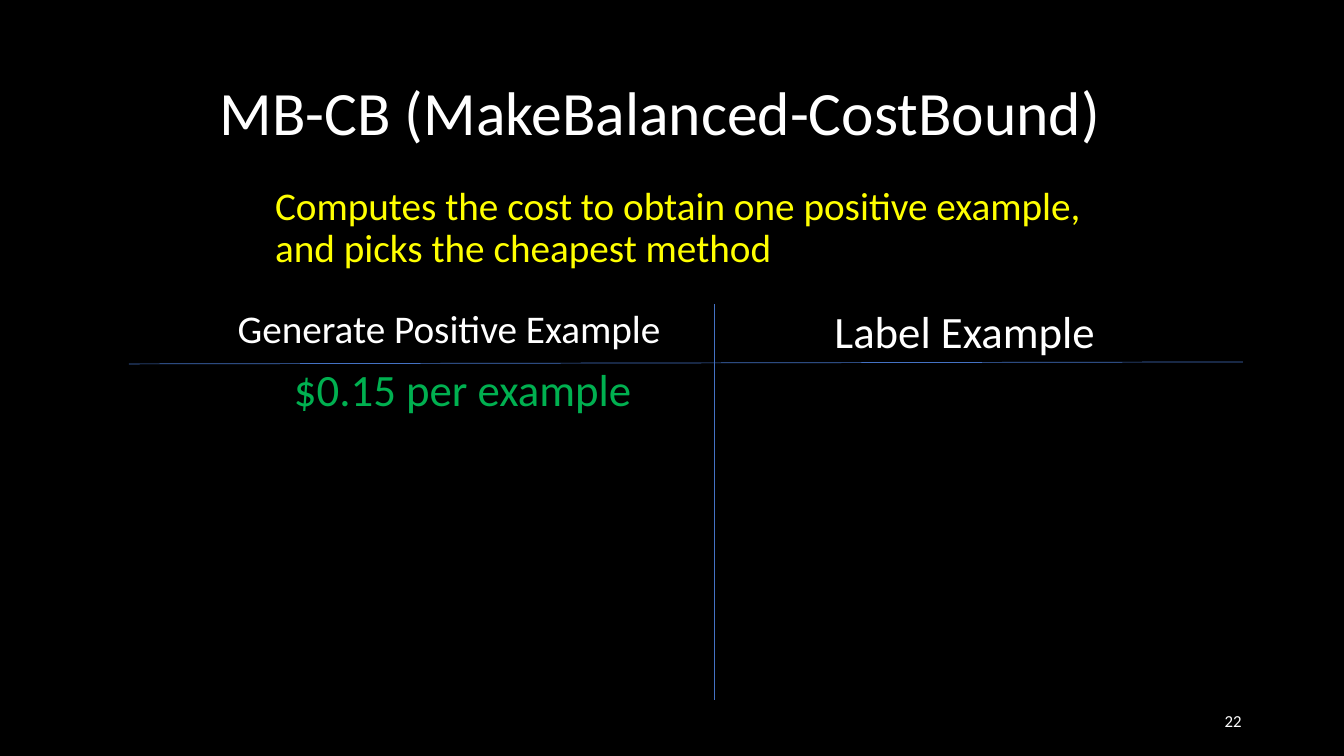
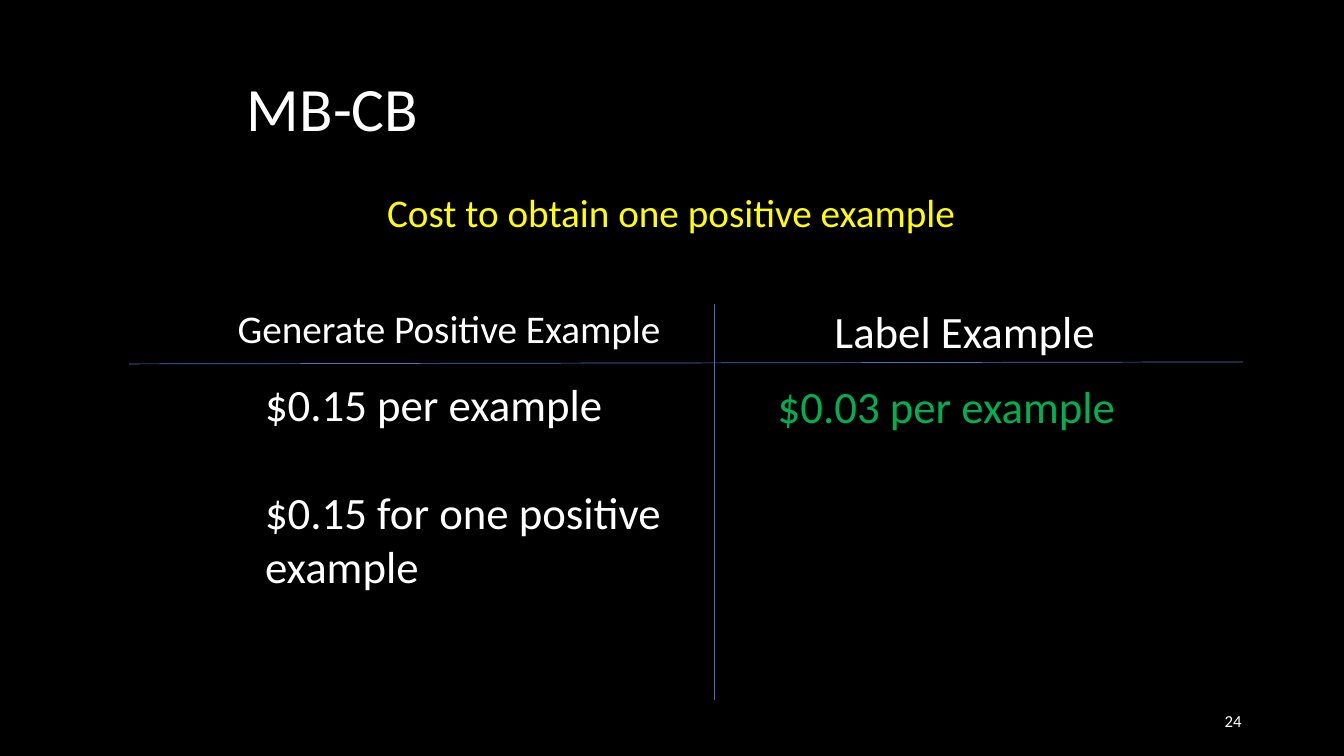
from collections import namedtuple

from pptx import Presentation
from pptx.dml.color import RGBColor
from pptx.enum.shapes import MSO_CONNECTOR
from pptx.enum.text import MSO_ANCHOR, MSO_AUTO_SIZE, PP_ALIGN
from pptx.oxml.ns import qn
from pptx.util import Cm, Pt

BLACK = RGBColor(0x00, 0x00, 0x00)
WHITE = RGBColor(0xFF, 0xFF, 0xFF)
YELLOW = RGBColor(0xFF, 0xFF, 0x00)
GREEN = RGBColor(0x00, 0xB0, 0x50)
BLUE = RGBColor(0x44, 0x72, 0xC4)

FONT = "Calibri"
LEFT, RIGHT = PP_ALIGN.LEFT, PP_ALIGN.RIGHT
TOP, MIDDLE = MSO_ANCHOR.TOP, MSO_ANCHOR.MIDDLE
NO_FIT = MSO_AUTO_SIZE.NONE
STRAIGHT = MSO_CONNECTOR.STRAIGHT
TITLE_AND_CONTENT = 1

# All boxes are in centimetres
Box = namedtuple("Box", "left top width height")
Entry = namedtuple("Entry", "box lines color")

COMPARISON = Box(3.25, 7.54, 28.07, 10.11)
PAGE_NUMBER = Box(23.92, 17.65, 7.62, 1.01)


def inside(region, part):
    """Shift a part's box by the corner of its region."""
    return part._replace(left=region.left + part.left, top=region.top + part.top)


def place(shape, box):
    shape.left, shape.top, shape.width, shape.height = map(Cm, box)


def format_text(shape, size, color, align=LEFT, anchor=TOP):
    frame = shape.text_frame
    frame.word_wrap = True
    frame.auto_size = NO_FIT
    frame.vertical_anchor = anchor
    for para in frame.paragraphs:
        para.alignment = align
        for span in para.runs:
            span.font.name = FONT
            span.font.size = Pt(size)
            span.font.color.rgb = color


def add_text(page, box, text, size, color=WHITE, **layout):
    shape = page.shapes.add_textbox(*map(Cm, box))
    shape.text_frame.text = text
    format_text(shape, size, color, **layout)
    return shape


def add_rule(page, region, start, end):
    points = [Cm(value) for x, y in (start, end)
              for value in (region.left + x, region.top + y)]
    rule = page.shapes.add_connector(STRAIGHT, *points)
    rule.line.color.rgb = BLUE
    rule.line.width = Pt(0.5)
    properties = rule._element.spPr
    properties.append(properties.makeelement(qn("a:effectLst"), {}))


def add_title(page, box, text):
    title = page.shapes.title
    place(title, box)
    title.text_frame.text = text
    title.text_frame.paragraphs[0].line_spacing = 0.9
    format_text(title, 44, WHITE, anchor=MIDDLE)


def add_summary(page, box, text):
    body = page.placeholders[1]
    place(body, box)
    body.text_frame.text = text
    para = body.text_frame.paragraphs[0]
    para.line_spacing = 0.9
    para.space_before = Pt(10)
    format_text(body, 28, YELLOW)
    # Plain paragraph: no bullet, no hanging indent
    properties = para._p.get_or_add_pPr()
    properties.set("marL", "0")
    properties.set("indent", "0")
    properties.append(properties.makeelement(qn("a:buNone"), {}))


def add_comparison(page, region, entries):
    # Column headings
    add_text(page, inside(region, Box(2.49, 0, 11.4, 1.45)),
             "Generate Positive Example", 28)
    add_text(page, inside(region, Box(17.53, 0, 7.3, 1.63)), "Label Example", 32)
    # Costs, with one empty line's height between paragraphs
    for entry in entries:
        shape = add_text(page, inside(region, entry.box),
                         "\n".join(entry.lines), 32, entry.color)
        for para in shape.text_frame.paragraphs[1:]:
            para.space_before = Pt(39)
    # Heading rule and column divider
    add_rule(page, region, (0, 1.63), (region.width, 1.58))
    add_rule(page, region, (14.76, 0.13), (14.76, region.height))


def add_page(deck, title, title_box, summary, summary_box, number, entries):
    page = deck.slides.add_slide(deck.slide_layouts[TITLE_AND_CONTENT])
    add_title(page, title_box, title)
    add_summary(page, summary_box, summary)
    add_text(page, PAGE_NUMBER, number, 12, align=RIGHT, anchor=MIDDLE)
    add_comparison(page, COMPARISON, entries)


def main():
    deck = Presentation()
    deck.slide_width, deck.slide_height = Cm(33.87), Cm(19.05)
    background = deck.slide_master.background.fill
    background.solid()
    background.fore_color.rgb = BLACK

    add_page(
        deck,
        "MB-CB (MakeBalanced-CostBound)", Box(5.28, 1.07, 26.04, 3.68),
        "Computes the cost to obtain one positive example, "
        "and picks the cheapest method", Box(6.68, 4.57, 21.46, 2.77),
        "22",
        [Entry(Box(3.91, 1.45, 9.2, 1.63), ["$0.15 per example"], GREEN)],
    )
    add_page(
        deck,
        "MB-CB", Box(5.97, 0.97, 21.89, 3.68),
        "Cost to obtain one positive example", Box(9.5, 4.75, 17.37, 2.77),
        "24",
        [
            Entry(Box(3.18, 1.83, 10.7, 5.74),
                  ["$0.15 per example", "$0.15 for one positive example"], WHITE),
            Entry(Box(16.1, 1.88, 9.2, 4.37), ["$0.03 per example"], GREEN),
        ],
    )
    deck.save("out.pptx")


if __name__ == "__main__":
    main()
